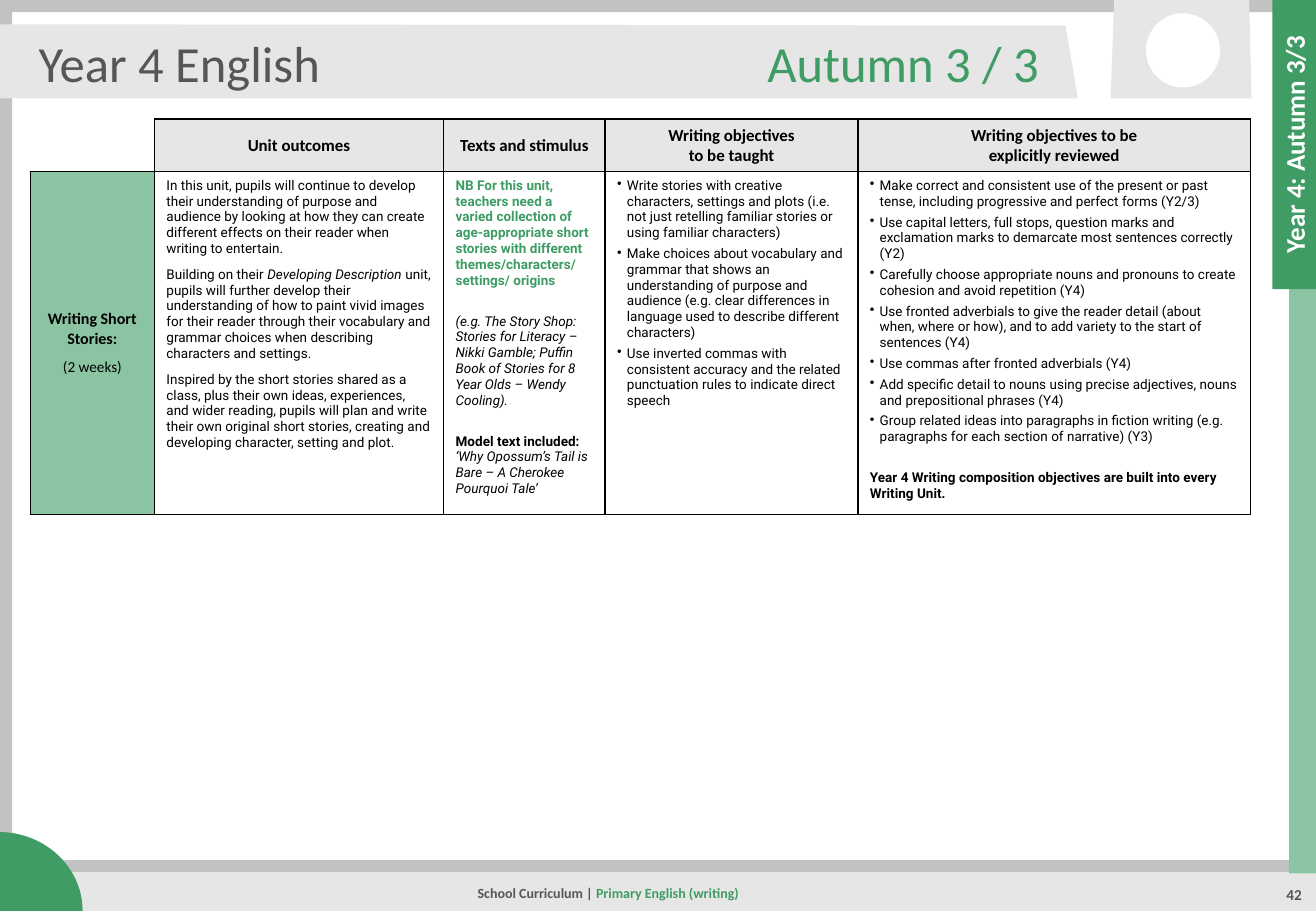
from dataclasses import dataclass, replace

from lxml import etree
from pptx import Presentation
from pptx.dml.color import RGBColor
from pptx.enum.shapes import MSO_CONNECTOR, MSO_SHAPE
from pptx.enum.text import MSO_ANCHOR, PP_ALIGN
from pptx.oxml.ns import qn
from pptx.util import Inches, Pt

LEFT, CENTER, RIGHT = PP_ALIGN.LEFT, PP_ALIGN.CENTER, PP_ALIGN.RIGHT
TOP, MIDDLE = MSO_ANCHOR.TOP, MSO_ANCHOR.MIDDLE
RECT, FRAME = MSO_SHAPE.RECTANGLE, MSO_SHAPE.FRAME
ARC, OVAL = MSO_SHAPE.ARC, MSO_SHAPE.OVAL
STRAIGHT = MSO_CONNECTOR.STRAIGHT


@dataclass(frozen=True)
class Type:
    size: float
    font: str
    color: str
    bold: bool = False
    italic: bool = False


@dataclass(frozen=True)
class Para:
    runs: tuple
    align: int = LEFT
    after: float = 0
    before: float = 0
    bullet: bool = False
    lines: float = 1.0


class Theme:
    green, pale = "3E9C64", "8BC4A2"
    gray, light, dark = "C2C2C2", "E6E6E6", "565656"
    white, black = "FFFFFF", "000000"
    title = Type(30, "Calibri", dark)
    term = replace(title, color=green)
    tab = Type(16, "Calibri", white, bold=True)
    foot = Type(8.3, "Calibri", dark, bold=True)
    topic = replace(foot, color=green)
    page = replace(foot, size=9)
    head = Type(10, "Calibri", black, bold=True)
    unit = replace(head, size=9.5)
    weeks = Type(9, "Calibri", black)
    body = Type(8, "Roboto", black)
    ital = replace(body, italic=True)
    bold = replace(body, bold=True)
    note = replace(bold, color=green)


class Page:
    def __init__(self, slide, theme):
        self.slide, self.theme = slide, theme

    def paint(self, item, color):
        item.fill.solid()
        item.fill.fore_color.rgb = RGBColor.from_string(color)

    def finish(self, shape, color):
        self.paint(shape, color)
        shape.line.fill.background()
        shape.shadow.inherit = False
        return shape

    def shape(self, kind, box, color):
        shape = self.slide.shapes.add_shape(kind, *map(Inches, box))
        return self.finish(shape, color)

    def outline(self, points, color):
        start, *rest = [(Inches(x), Inches(y)) for x, y in points]
        form = self.slide.shapes.build_freeform(*start)
        form.add_line_segments(rest, close=True)
        return self.finish(form.convert_to_shape(), color)

    def rule(self, start, end, color, width):
        line = self.slide.shapes.add_connector(
            STRAIGHT, *map(Inches, start + end))
        line.line.color.rgb = RGBColor.from_string(color)
        line.line.width = Pt(width)
        etree.SubElement(line.element.spPr, qn("a:effectLst"))

    def put(self, frame, paras):
        for i, spec in enumerate(paras):
            para = frame.add_paragraph() if i else frame.paragraphs[0]
            if spec.bullet:
                props = para._p.get_or_add_pPr()
                props.set("marL", str(Inches(0.08)))
                props.set("indent", str(-Inches(0.08)))
                etree.SubElement(props, qn("a:buChar")).set("char", "•")
            para.alignment, para.line_spacing = spec.align, spec.lines
            para.space_before, para.space_after = Pt(spec.before), Pt(spec.after)
            for text, style in spec.runs:
                for n, part in enumerate(text.split("\n")):
                    if n:
                        para.add_line_break()
                    run = para.add_run()
                    run.text, font = part, run.font
                    font.size, font.name = Pt(style.size), style.font
                    font.bold, font.italic = style.bold, style.italic
                    font.color.rgb = RGBColor.from_string(style.color)

    def text(self, box, para, anchor=MIDDLE, turn=0):
        shape = self.slide.shapes.add_textbox(*map(Inches, box))
        shape.rotation = turn
        shape.text_frame.word_wrap = True
        shape.text_frame.vertical_anchor = anchor
        self.put(shape.text_frame, [para])

    def border(self, cell, sides):
        props = cell._tc.get_or_add_tcPr()
        for side in sides:
            line = etree.SubElement(props, qn(f"a:ln{side}"), w=str(Pt(1)))
            fill = etree.SubElement(line, qn("a:solidFill"))
            etree.SubElement(fill, qn("a:srgbClr"), val=self.theme.black)

    def table(self, left, top, cols, rows, cells):
        size = Inches(sum(cols)), Inches(sum(rows))
        grid = self.slide.shapes.add_table(
            len(rows), len(cols), Inches(left), Inches(top), *size).table
        grid.first_row = grid.horz_banding = False
        for col, width in zip(grid.columns, cols):
            col.width = Inches(width)
        for row, height in zip(grid.rows, rows):
            row.height = Inches(height)
        for r, line in enumerate(cells):
            for c, (paras, color) in enumerate(line):
                cell = grid.cell(r, c)
                self.border(cell, "LRTB" if paras else "RB")
                self.paint(cell, color)
                cell.vertical_anchor = TOP if r and c else MIDDLE
                if not r:
                    cell.margin_left = cell.margin_right = Inches(0.04)
                self.put(cell.text_frame, paras)


def plain(*runs, after=3, before=0):
    return Para(runs, after=after, before=before)


def points(*texts):
    return [Para(((t, Theme.body),), after=3, bullet=True) for t in texts]


def main():
    deck = Presentation()
    deck.slide_width, deck.slide_height = Inches(10.83), Inches(7.5)
    th = Theme()
    page = Page(deck.slides.add_slide(deck.slide_layouts[6]), th)

    # Frame and footer
    frame = page.shape(FRAME, (0, 0, 10.85, 7.5), th.gray)
    frame.adjustments[0] = 0.1 / 7.5
    page.shape(RECT, (0.32, 7.18, 10.53, 0.33), th.light)
    page.rule((0.05, 7.13), (10.83, 7.13), th.gray, 7)
    page.shape(ARC, (-0.7, 6.85, 1.38, 1.3), th.green)
    page.text((2.05, 7.21, 5.91, 0.3), Para(
        (("School Curriculum | ", th.foot),
         ("Primary English (writing)", th.topic)), CENTER, lines=0.9))

    # Title band, side tab and ring
    page.outline([(-0.02, 0.2), (-0.01, 0.81), (8.87, 0.81), (8.77, 0.21)],
                 th.light)
    page.shape(RECT, (10.61, 0, 0.24, 7.19), th.pale)
    page.shape(RECT, (10.47, 0, 0.39, 2.38), th.green)
    page.text((10.33, 7.21, 0.64, 0.28),
              Para((("42", th.page),), CENTER, after=12, lines=1.2), TOP)
    page.outline([(9.14, 0.81), (10.3, 0.81), (10.28, -0.01), (9.17, -0.01)],
                 th.light)
    page.shape(OVAL, (9.43, 0.11, 0.61, 0.61), th.white)

    # Unit table
    heads = ("Unit outcomes", "Texts and stimulus",
             "Writing objectives\nto be taught",
             "Writing objectives to be\nexplicitly reviewed")
    top = [([], th.white)] + [
        ([Para(((h, th.head),), CENTER, after=3)], th.light) for h in heads]
    unit = [Para((("Writing Short Stories:", th.unit),), CENTER, after=6),
            Para((("(2 weeks)", th.weeks),), CENTER, after=6)]
    aims = [
        plain(("In this unit, pupils will continue to develop their understanding of purpose and audience by looking at how they can create different effects on their reader when writing to entertain.", th.body), after=6),
        plain(("Building on their ", th.body), ("Developing Description ", th.ital),
              ("unit, pupils will further develop their understanding of how to paint vivid images for their reader through their vocabulary and grammar choices when describing characters and settings.", th.body), after=6),
        plain(("Inspired by the short stories shared as a class, plus their own ideas, experiences, and wider reading, pupils will plan and write their own original short stories, creating and developing character, setting and plot.", th.body), after=6)]
    texts = [
        plain(("NB For this unit, teachers need a varied collection of age-appropriate short stories with different themes/characters/ settings/ origins", th.note)),
        plain(("(e.g. The Story Shop: Stories for Literacy – Nikki Gamble; Puffin Book of Stories for 8 Year Olds – Wendy Cooling).", th.ital), before=12),
        plain(("Model text included: ", th.bold),
              ("‘Why Opossum’s Tail is Bare – A Cherokee Pourquoi Tale’", th.ital), before=12)]
    taught = points(
        "Write stories with creative characters, settings and plots (i.e. not just retelling familiar stories or using familiar characters)",
        "Make choices about vocabulary and grammar that shows an understanding of purpose and audience (e.g. clear differences in language used to describe different characters)",
        "Use inverted commas with consistent accuracy and the related punctuation rules to indicate direct speech")
    review = points(
        "Make correct and consistent use of the present or past tense, including progressive and perfect forms (Y2/3)",
        "Use capital letters, full stops, question marks and exclamation marks to demarcate most sentences correctly (Y2)",
        "Carefully choose appropriate nouns and pronouns to create cohesion and avoid repetition (Y4)",
        "Use fronted adverbials to give the reader detail (about when, where or how), and to add variety to the start of sentences (Y4)",
        "Use commas after fronted adverbials (Y4)",
        "Add specific detail to nouns using precise adjectives, nouns and prepositional phrases (Y4)",
        "Group related ideas into paragraphs in fiction writing (e.g. paragraphs for each section of narrative) (Y3)")
    review.append(plain(("Year 4 Writing composition objectives are built into every Writing Unit.", th.bold), before=12))
    main_row = [(unit, th.pale)] + [
        (paras, th.white) for paras in (aims, texts, taught, review)]
    page.table(0.25, 0.98, (1.02, 2.38, 1.33, 2.08, 3.23), (0.43, 2.77),
               (top, main_row))

    # Titles
    page.text((9.46, 1.02, 2.38, 0.34),
              Para((("Year 4: Autumn 3/3", th.tab),), CENTER), turn=270)
    page.text((0.22, 0.26, 3.21, 0.5), Para((("Year 4 English", th.title),)))
    page.text((5.28, 0.26, 3.37, 0.5),
              Para((("Autumn 3 / 3", th.term),), RIGHT))

    deck.save("out.pptx")


if __name__ == "__main__":
    main()
